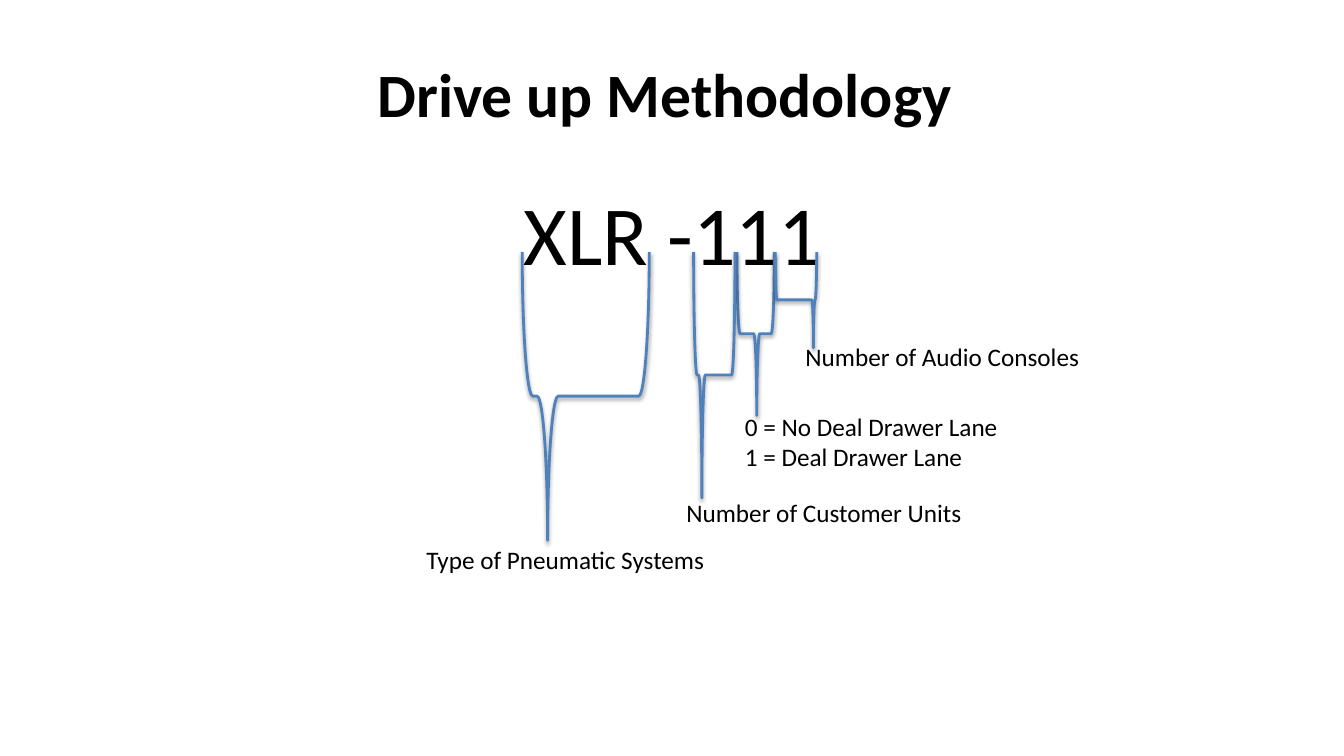
from dataclasses import dataclass

from lxml.etree import SubElement
from pptx import Presentation
from pptx.dml.color import RGBColor
from pptx.enum.shapes import MSO_SHAPE
from pptx.enum.text import MSO_ANCHOR, MSO_AUTO_SIZE, PP_ALIGN
from pptx.oxml.ns import qn
from pptx.slide import Slide
from pptx.text.text import TextFrame
from pptx.util import Inches, Pt

FONT = "Calibri"
BLACK = "000000"
BRACE_BLUE = "4F81BD"
BRACE_TOP = 2.5


@dataclass
class CodePart:
    """A brace hanging below part of the code, with its explanation."""
    left: float
    width: float
    height: float
    tip: float
    label: tuple[str, ...]
    label_box: tuple[float, float, float, float]


CODE_PARTS = [
    CodePart(5.18, 1.26, 2.86, 0.2, ("Type of Pneumatic Systems",),
             (4.13, 5.35, 2.99, 0.4)),
    CodePart(7.31, 0.37, 1.62, 0.53,
             ("0 = No Deal Drawer Lane", "1 = Deal Drawer Lane"),
             (7.29, 4.03, 2.74, 0.71)),
    CodePart(6.88, 0.41, 2.44, 0.2, ("Number of Customer Units",),
             (6.71, 4.88, 2.96, 0.4)),
    CodePart(7.69, 0.41, 0.95, 0.92, ("Number of Audio Consoles",),
             (7.89, 3.34, 2.95, 0.4)),
]


def color(value: str) -> RGBColor:
    return RGBColor.from_string(value)


def write(frame: TextFrame, lines: tuple[str, ...], size: float,
          align: PP_ALIGN = PP_ALIGN.LEFT, bold: bool = False) -> None:
    for index, line in enumerate(lines):
        paragraph = frame.add_paragraph() if index else frame.paragraphs[0]
        paragraph.alignment = align
        run = paragraph.add_run()
        run.text = line
        run.font.name = FONT
        run.font.size = Pt(size)
        run.font.bold = bold
        run.font.color.rgb = color(BLACK)


def add_title(slide: Slide, text: str) -> None:
    title = slide.shapes.title
    title.left, title.top = Inches(0), Inches(0.3)
    title.width, title.height = Inches(13.33), Inches(1.25)
    title.text_frame.vertical_anchor = MSO_ANCHOR.MIDDLE
    write(title.text_frame, (text,), 44, PP_ALIGN.CENTER, bold=True)


def add_code(slide: Slide, text: str) -> None:
    box = slide.shapes.add_textbox(Inches(0.67), Inches(1.75), Inches(12), Inches(4.95))
    box.text_frame.word_wrap = True
    write(box.text_frame, (text,), 60, PP_ALIGN.CENTER)


def add_brace(slide: Slide, part: CodePart) -> None:
    # The brace is turned a quarter, so its frame has the sides swapped
    center_x = part.left + part.width / 2
    center_y = BRACE_TOP + part.height / 2
    brace = slide.shapes.add_shape(
        MSO_SHAPE.LEFT_BRACE,
        Inches(center_x - part.height / 2), Inches(center_y - part.width / 2),
        Inches(part.height), Inches(part.width))
    brace.rotation = 270
    brace.adjustments[1] = part.tip
    brace.fill.background()
    brace.line.color.rgb = color(BRACE_BLUE)
    brace.line.width = Pt(2)

    # Soft shadow straight below
    brace.shadow.inherit = False
    effects = brace._element.spPr.find(qn("a:effectLst"))
    shadow = SubElement(effects, qn("a:outerShdw"), blurRad=str(Pt(3.1)),
                        dist=str(Pt(1.6)), dir="5400000", rotWithShape="0")
    shade = SubElement(shadow, qn("a:srgbClr"), val=BLACK)
    SubElement(shade, qn("a:alpha"), val="38000")


def add_label(slide: Slide, part: CodePart) -> None:
    box = slide.shapes.add_textbox(*(Inches(length) for length in part.label_box))
    box.text_frame.word_wrap = False
    box.text_frame.auto_size = MSO_AUTO_SIZE.SHAPE_TO_FIT_TEXT
    write(box.text_frame, part.label, 18)


def main() -> None:
    presentation = Presentation()
    presentation.slide_width = Inches(13.33)
    presentation.slide_height = Inches(7.5)
    slide = presentation.slides.add_slide(presentation.slide_layouts[5])

    add_title(slide, "Drive up Methodology ")
    add_code(slide, "XLR -111")
    for part in CODE_PARTS:
        add_brace(slide, part)
        add_label(slide, part)

    presentation.save("out.pptx")


if __name__ == "__main__":
    main()
